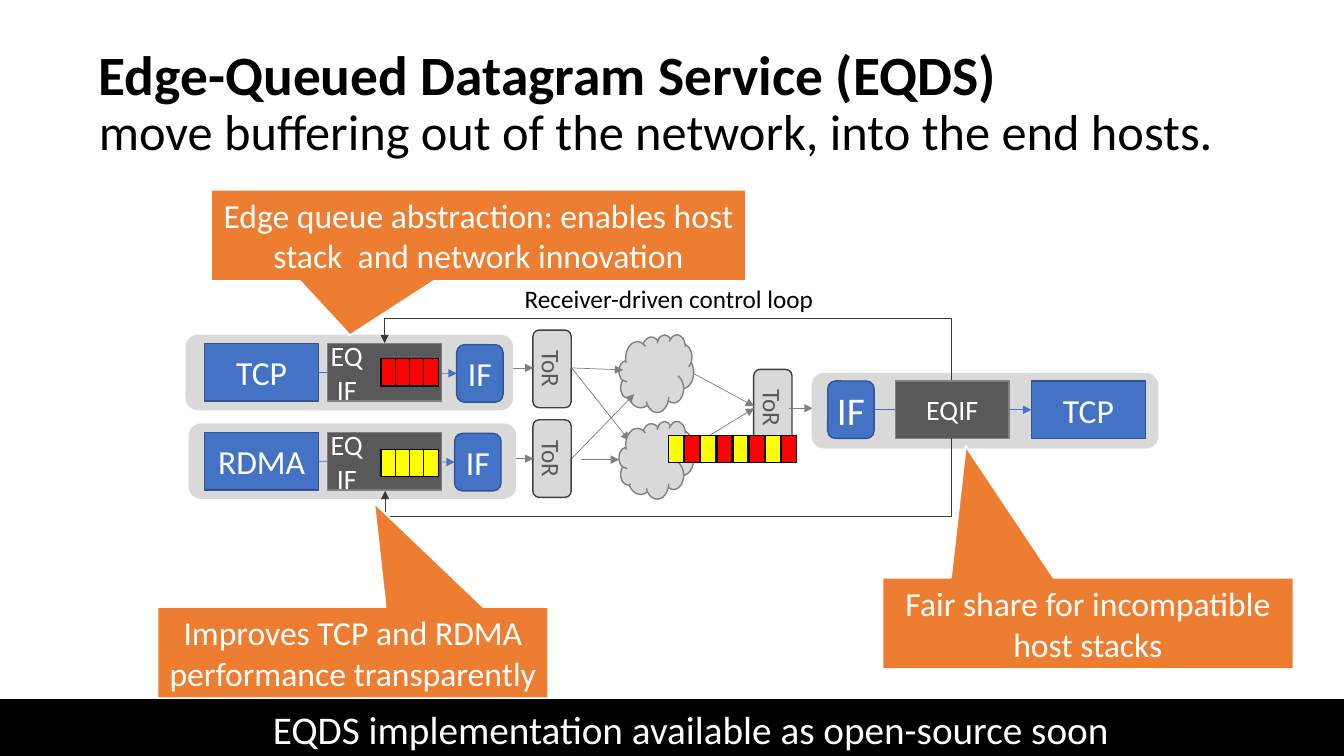
from lxml.etree import SubElement
from pptx import Presentation
from pptx.dml.color import RGBColor
from pptx.enum.shapes import MSO_CONNECTOR, MSO_SHAPE
from pptx.enum.text import MSO_ANCHOR, MSO_AUTO_SIZE, PP_ALIGN
from pptx.oxml.ns import qn
from pptx.util import Pt

PX = 9144  # EMU: 100 px to the inch
FONT = "Calibri"
WHITE = RGBColor(0xFF, 0xFF, 0xFF)
BLACK = RGBColor(0x00, 0x00, 0x00)
LIGHT = RGBColor(0xD9, 0xD9, 0xD9)
GREY = RGBColor(0x80, 0x80, 0x80)
DARK = RGBColor(0x59, 0x59, 0x59)
EDGE = RGBColor(0x40, 0x40, 0x40)
LOOP = RGBColor(0x3B, 0x38, 0x38)
BLUE = RGBColor(0x44, 0x72, 0xC4)
NAVY = RGBColor(0x32, 0x54, 0x91)
ORANGE = RGBColor(0xED, 0x7D, 0x31)
RED = RGBColor(0xFF, 0x00, 0x00)
YELLOW = RGBColor(0xFF, 0xFF, 0x00)


def px(*lengths):
    return [n * PX for n in lengths]


def style_run(r, size, color, bold=False):
    for name, value in {"name": FONT, "size": Pt(size), "bold": bold}.items():
        setattr(r.font, name, value)
    r.font.color.rgb = color


def write(s, lines, size, color=WHITE, insets=(10, 5, 10, 5), wrap=True,
          anchor=MSO_ANCHOR.MIDDLE):
    tf = s.text_frame
    left, top, right, bottom = px(*insets)
    frame = {"margin_left": left, "margin_top": top, "margin_right": right,
             "margin_bottom": bottom, "word_wrap": wrap, "vertical_anchor": anchor}
    for name, value in frame.items():
        setattr(tf, name, value)
    for i, line in enumerate(lines):
        p = tf.paragraphs[0] if i == 0 else tf.add_paragraph()
        p.alignment = PP_ALIGN.CENTER
        r = p.add_run()
        r.text = line
        style_run(r, size, color)


def add_box(slide, box, fill, line=None, kind=MSO_SHAPE.RECTANGLE, weight=1):
    s = slide.shapes.add_shape(kind, *px(*box))
    s.shadow.inherit = False
    s.fill.solid()
    s.fill.fore_color.rgb = fill
    if line is None:
        s.line.fill.background()
    else:
        s.line.color.rgb = line
        s.line.width = Pt(weight)
    return s


def add_panel(slide, box):
    add_box(slide, box, LIGHT, kind=MSO_SHAPE.ROUNDED_RECTANGLE)


def add_stack(slide, name, x, y):
    s = add_box(slide, (x, y, 113, 57), BLUE, NAVY)
    write(s, [name], 24, insets=(4, 5, 4, 5))
    return s


def add_interface(slide, x, y, size=24):
    s = add_box(slide, (x, y, 46, 57), BLUE, NAVY, MSO_SHAPE.ROUNDED_RECTANGLE)
    write(s, ["IF"], size, insets=(0, 4, 0, 4))
    return s


def add_eqif(slide, x, y, queue_room=0):
    s = add_box(slide, (x, y, 113, 57), DARK, GREY)
    write(s, ["EQIF"], 20, insets=(0, 5, queue_room, 5))


def add_tor(slide, x, y):
    s = add_box(slide, (x, y, 77, 38), LIGHT, EDGE, MSO_SHAPE.ROUNDED_RECTANGLE)
    s.rotation = 90
    write(s, ["ToR"], 18, DARK)


def add_queue(slide, x, y, pitch, colors):
    for i, color in enumerate(colors):
        add_box(slide, (x + i * pitch, y, 15, 27), color, BLACK)


def add_callout(slide, box, tip, lines, wrap=False):
    s = add_box(slide, box, ORANGE, WHITE, MSO_SHAPE.RECTANGULAR_CALLOUT, 1.5)
    s.adjustments[0], s.adjustments[1] = tip
    write(s, lines, 24, wrap=wrap)


def style_arrow(c, color):
    c.line.color.rgb = color
    c.line.width = Pt(0.5)
    SubElement(c.line._get_or_add_ln(), qn("a:tailEnd"), type="triangle")
    SubElement(c._element.spPr, qn("a:effectLst"))


def add_arrow(slide, start, end, color=GREY):
    c = slide.shapes.add_connector(MSO_CONNECTOR.STRAIGHT, *px(*start, *end))
    style_arrow(c, color)
    return c


def join(slide, left_box, right_box):
    c = add_arrow(slide, (0, 0), (0, 0), BLUE)
    c.begin_connect(left_box, 3)
    c.end_connect(right_box, 1)


def add_loop(slide, start, end, turn_y):
    """Vertical-first elbow from start to end, running level at turn_y."""
    (x1, y1), (x2, y2) = start, end
    w, h = abs(y2 - y1), abs(x2 - x1)
    left, top = (x1 + x2 - w) // 2, (y1 + y2 - h) // 2
    c = slide.shapes.add_connector(MSO_CONNECTOR.ELBOW,
                                   *px(left, top, left + w, top + h))
    upward = y2 < y1
    xfrm = c._element.spPr.find(qn("a:xfrm"))
    xfrm.set("rot", str((270 if upward else 90) * 60000))
    if upward:
        xfrm.set("flipV", "1")
    guides = c._element.spPr.find(qn("a:prstGeom")).find(qn("a:avLst"))
    bend = round((turn_y - y1) / (y2 - y1) * 100000)
    SubElement(guides, qn("a:gd"), name="adj1", fmla=f"val {bend}")
    style_arrow(c, LOOP)


def add_title(slide):
    s = slide.shapes.title
    s.left, s.top, s.width, s.height = px(88, 42, 1150, 162)
    tf = s.text_frame
    tf.auto_size = MSO_AUTO_SIZE.NONE
    tf.word_wrap = True
    tf.vertical_anchor = MSO_ANCHOR.TOP
    p = tf.paragraphs[0]
    p.alignment = PP_ALIGN.LEFT
    p.line_spacing = 0.9
    r = p.add_run()
    r.text = "Edge-Queued Datagram Service (EQDS)"
    style_run(r, 39.6, BLACK, True)
    p.add_line_break()
    r = p.add_run()
    r.text = "move buffering out of the network, into the end hosts."
    style_run(r, 36, BLACK)


def add_network(slide):
    for x, y in ((509, 347), (509, 436), (728, 386)):
        add_tor(slide, x, y)
    add_box(slide, (614, 332, 74, 77), LIGHT, GREY, MSO_SHAPE.CLOUD)
    for start, end in (
        ((506, 365), (529, 365)), ((506, 455), (529, 455)),
        ((567, 365), (618, 367)), ((567, 365), (624, 437)),
        ((567, 455), (629, 391)), ((576, 456), (614, 456)),
        ((687, 370), (748, 403)), ((684, 444), (748, 405)),
        ((783, 405), (806, 405)),
    ):
        add_arrow(slide, start, end)
    add_box(slide, (614, 418, 74, 77), LIGHT, GREY, MSO_SHAPE.CLOUD)


def add_sender(slide, name, panel_x, y, if_x, queue_y, color):
    add_panel(slide, (panel_x, y - 9, 325, 75))
    join(slide, add_stack(slide, name, 203, y), add_interface(slide, if_x, y + 1))
    add_eqif(slide, 325, y, 75)
    add_queue(slide, 378, queue_y, 14, [color] * 4)


def add_receiver(slide):
    add_panel(slide, (805, 370, 344, 75))
    join(slide, add_interface(slide, 821, 378, 28), add_stack(slide, "TCP", 1023, 378))
    add_eqif(slide, 888, 378)


def main():
    prs = Presentation()
    prs.slide_width, prs.slide_height = px(1333, 750)
    slide = prs.slides.add_slide(prs.slide_layouts[5])
    add_title(slide)
    add_network(slide)
    add_sender(slide, "TCP", 184, 341, 453, 356, RED)
    add_sender(slide, "RDMA", 187, 429, 451, 446, YELLOW)
    add_receiver(slide)
    add_loop(slide, (944, 378), (382, 341), 316)
    add_loop(slide, (944, 435), (382, 487), 512)
    label = slide.shapes.add_textbox(*px(382, 276, 563, 40))
    write(label, ["Receiver-driven control loop"], 18, BLACK, anchor=MSO_ANCHOR.TOP)
    add_queue(slide, 663, 432, 16, [YELLOW, RED] * 4)
    add_callout(slide, (156, 602, 388, 91), (0.054, -1.637),
                ["Improves TCP and RDMA", "performance transparently"])
    add_callout(slide, (875, 573, 408, 91), (-0.297, -1.937),
                ["Fair share for incompatible host stacks"], wrap=True)
    add_callout(slide, (209, 188, 531, 91), (-0.24, 1.091),
                ["Edge queue abstraction: enables host",
                 "stack  and network innovation"])
    bar = add_box(slide, (-18, 695, 1406, 57), BLACK, BLACK, weight=1.5)
    write(bar, ["EQDS implementation available as open-source soon"], 28)
    prs.save("out.pptx")


if __name__ == "__main__":
    main()
